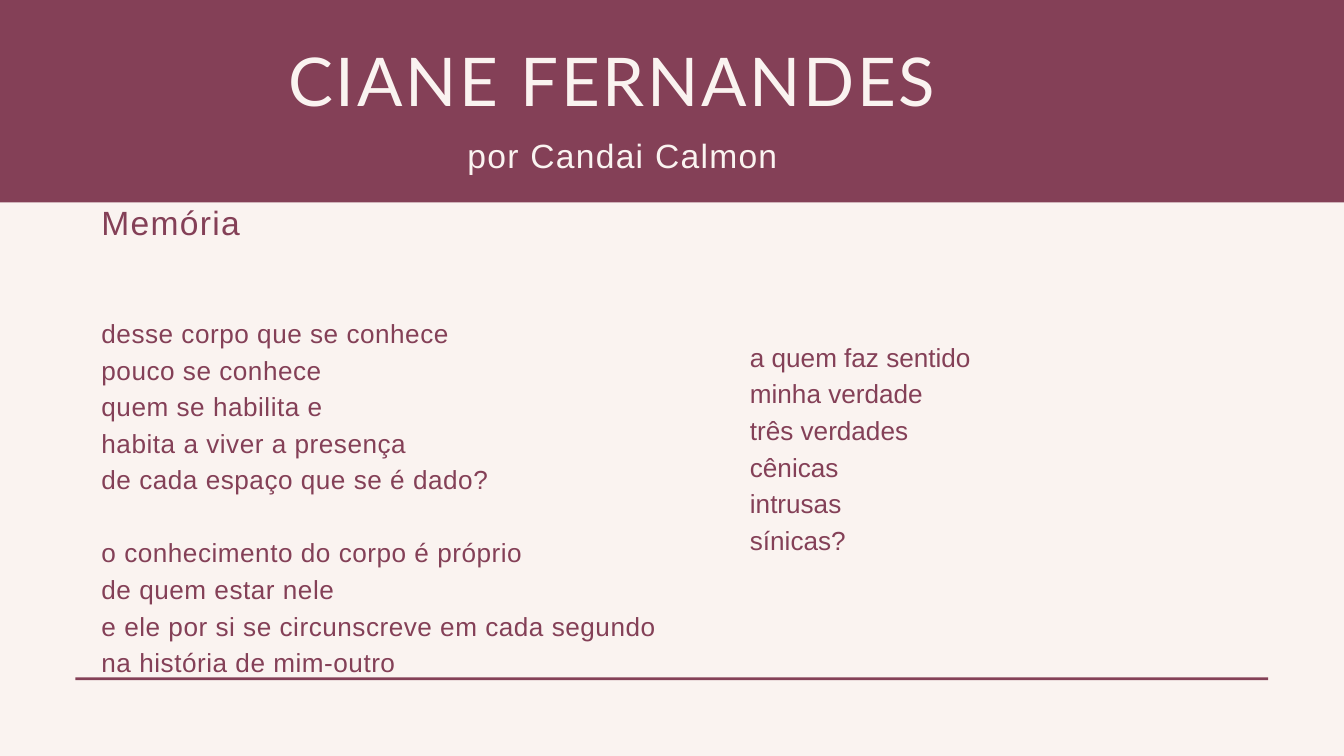
"""Build the Ciane Fernandes poem slide."""
from typing import NamedTuple

from pptx import Presentation
from pptx.dml.color import RGBColor
from pptx.enum.shapes import MSO_SHAPE
from pptx.enum.text import PP_ALIGN
from pptx.util import Inches, Pt

RECTANGLE = MSO_SHAPE.RECTANGLE
LEFT, CENTER = PP_ALIGN.LEFT, PP_ALIGN.CENTER
WIDTH, HEIGHT = Inches(20), Inches(11.25)
COLORS = {"wine": "844057", "cream": "FAF3F0"}


class Area(NamedTuple):
    """Hold a rectangle in percent of the slide's size."""
    left: float
    top: float
    width: float
    height: float

    def lengths(self) -> tuple[int, ...]:
        """Return the rectangle in slide units."""
        sides = (WIDTH, HEIGHT, WIDTH, HEIGHT)
        return tuple(round(share * side / 100) for share, side in zip(self, sides))


HEADER_BAND = Area(-2, -12.53, 103.95, 39.29)
FOOTER_RULE = Area(5.6, 89.6, 88.75, 0.36)
TITLE = Area(10.4, 5.16, 70.3, 10.67)
BYLINE = Area(16.3, 17.78, 60.05, 5.24)
POEM_NAME = Area(7.55, 26.67, 43.85, 5.24)
LEFT_POEM = Area(7.55, 41.28, 43.85, 48.36)
RIGHT_POEM = Area(55.8, 44.44, 26.9, 28.71)

LEFT_STANZAS = [
    ["desse corpo que se conhece", "pouco se conhece", "quem se habilita e",
     "habita a viver a presença", "de cada espaço que se é dado?"],
    ["o conhecimento do corpo é próprio", "de quem estar nele",
     "e ele por si se circunscreve em cada segundo", "na história de mim-outro"],
]
RIGHT_STANZAS = [
    ["a quem faz sentido", "minha verdade", "três verdades",
     "cênicas", "intrusas", "sínicas?"],
]


def add_block(slide, area: Area, color: str) -> None:
    """Draw a plain filled rectangle."""
    block = slide.shapes.add_shape(RECTANGLE, *area.lengths())
    block.shadow.inherit = False
    block.fill.solid()
    block.fill.fore_color.rgb = RGBColor.from_string(COLORS[color])
    block.line.fill.background()


def add_text(slide, area: Area, stanzas: list[list[str]], *, size: float = 28,
             leading: float = 39.2, tracking: float = 0, font: str = "Arial",
             color: str = "wine", align: PP_ALIGN = LEFT) -> None:
    """Write stanzas one line a paragraph, with one line's gap between them."""
    frame = slide.shapes.add_textbox(*area.lengths()).text_frame
    frame.word_wrap = True
    frame.margin_left = frame.margin_top = frame.margin_right = frame.margin_bottom = 0
    for stanza_index, stanza in enumerate(stanzas):
        for verse_index, verse in enumerate(stanza):
            is_first = stanza_index == verse_index == 0
            paragraph = frame.paragraphs[0] if is_first else frame.add_paragraph()
            paragraph.alignment = align
            paragraph.line_spacing = Pt(leading)
            if stanza_index and not verse_index:
                paragraph.space_before = Pt(leading)
            run = paragraph.add_run()
            run.text = verse
            run.font.name = font
            run.font.size = Pt(size)
            run.font.color.rgb = RGBColor.from_string(COLORS[color])
            run._r.get_or_add_rPr().set("spc", str(round(tracking * 100)))


def main() -> None:
    """Compose and save the slide."""
    deck = Presentation()
    deck.slide_width, deck.slide_height = WIDTH, HEIGHT
    slide = deck.slides.add_slide(deck.slide_layouts[6])
    slide.background.fill.solid()
    slide.background.fill.fore_color.rgb = RGBColor.from_string(COLORS["cream"])

    add_text(slide, POEM_NAME, [["Memória"]], size=36, leading=43.2, tracking=1.4)
    add_text(slide, LEFT_POEM, LEFT_STANZAS, tracking=0.6)
    add_block(slide, HEADER_BAND, "wine")
    add_block(slide, FOOTER_RULE, "wine")
    add_text(slide, BYLINE, [["por Candai Calmon"]], size=36, leading=43.2,
             tracking=1.4, color="cream", align=CENTER)
    add_text(slide, TITLE, [["CIANE FERNANDES"]], size=72, leading=86.4,
             tracking=2.9, font="Lato", color="cream", align=CENTER)
    add_text(slide, RIGHT_POEM, RIGHT_STANZAS)
    deck.save("out.pptx")


if __name__ == "__main__":
    main()
